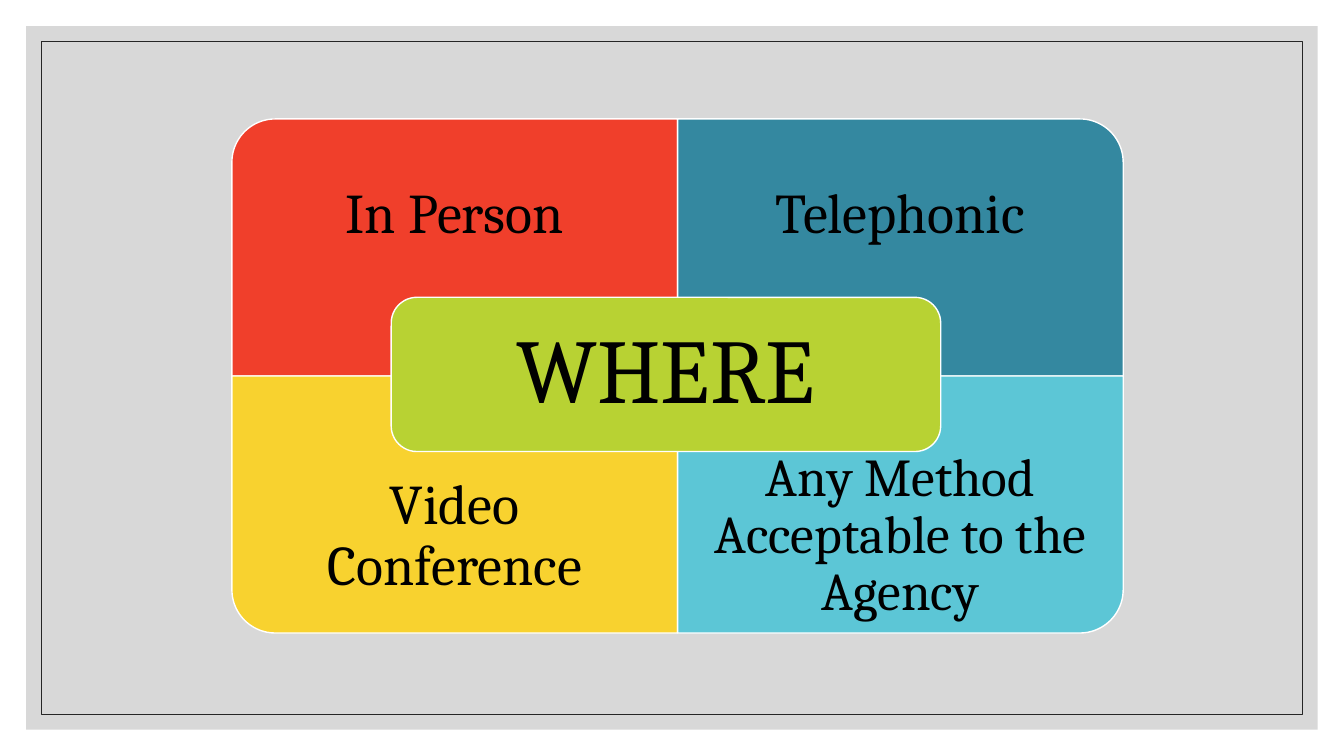
import math

from lxml import etree
from pptx import Presentation
from pptx import util as u
from pptx.dml.color import RGBColor
from pptx.enum import shapes, text
from pptx.oxml import ns

BLACK = RGBColor(0x00, 0x00, 0x00)
WHITE = RGBColor(0xFF, 0xFF, 0xFF)
PANEL_GRAY = RGBColor(0xBF, 0xBF, 0xBF)
FRAME_GRAY = RGBColor(0x26, 0x26, 0x26)
RED = RGBColor(0xF0, 0x3F, 0x2B)
TEAL = RGBColor(0x34, 0x88, 0xA0)
YELLOW = RGBColor(0xF8, 0xD2, 0x2F)
AQUA = RGBColor(0x5C, 0xC6, 0xD6)
LIME = RGBColor(0xB8, 0xD2, 0x33)

# Content: wording, fill, text size, side inset, inset towards the hub,
# direction from the matrix centre (x, y)
QUADRANTS = [
    ("In Person", RED, 40, 0.31, 0.95, -1, -1),
    ("Telephonic", TEAL, 40, 0.31, 0.95, 1, -1),
    ("Video Conference", YELLOW, 40, 0.31, 0.95, -1, 1),
    ("Any Method Acceptable to the Agency", AQUA, 38, 0.3, 0.93, 1, 1),
]
HUB = ("WHERE", LIME, 65)

# Geometry in inches
SLIDE_W, SLIDE_H = 13.33, 7.5
PANEL_MARGIN, FRAME_MARGIN = 0.26, 0.41
CENTER_X, CENTER_Y = 6.72, 3.73
QUAD_W, QUAD_H, RADIUS = 4.42, 2.55, 0.43
HUB_BOX = (3.88, 2.95, 5.45, 1.53)
HUB_INSET = 0.28
ARC_STEPS = 24


def paint(shape, fill, line, width):
    shape.shadow.inherit = False
    if fill is None:
        shape.fill.background()
    else:
        shape.fill.solid()
        shape.fill.fore_color.rgb = fill
    if line is None:
        shape.line.fill.background()
    else:
        shape.line.color.rgb = line
        shape.line.width = u.Pt(width)


def write(shape, wording, size, left, top, right, bottom):
    frame = shape.text_frame
    layout = {
        "word_wrap": True,
        "vertical_anchor": text.MSO_ANCHOR.MIDDLE,
        "margin_left": u.Inches(left),
        "margin_top": u.Inches(top),
        "margin_right": u.Inches(right),
        "margin_bottom": u.Inches(bottom),
    }
    for name, value in layout.items():
        setattr(frame, name, value)
    paragraph = frame.paragraphs[0]
    paragraph.alignment = text.PP_ALIGN.CENTER
    paragraph.line_spacing = 0.9
    run = paragraph.add_run()
    run.text = wording
    for name, value in {"name": "Cambria", "size": u.Pt(size)}.items():
        setattr(run.font, name, value)
    run.font.color.rgb = BLACK


def add_bordered_area(slide, margin, fill, line):
    area = slide.shapes.add_shape(
        shapes.MSO_SHAPE.RECTANGLE, u.Inches(margin), u.Inches(margin),
        u.Inches(SLIDE_W - 2 * margin), u.Inches(SLIDE_H - 2 * margin))
    paint(area, fill, line, 0.5)
    return area


def add_quadrant(slide, wording, fill, size, side, inner, dx, dy):
    # Outline runs from the centre, around the rounded outer corner
    offsets = [(0, 0), (QUAD_W, 0)]
    for step in range(ARC_STEPS + 1):
        angle = math.pi / 2 * step / ARC_STEPS
        offsets.append((QUAD_W - RADIUS + RADIUS * math.cos(angle),
                        QUAD_H - RADIUS + RADIUS * math.sin(angle)))
    offsets.append((0, QUAD_H))
    points = [(u.Inches(CENTER_X + dx * x), u.Inches(CENTER_Y + dy * y))
              for x, y in offsets]
    outline = slide.shapes.build_freeform(*points[0])
    outline.add_line_segments(points[1:], close=True)
    quadrant = outline.convert_to_shape()
    paint(quadrant, fill, WHITE, 1)
    top, bottom = (side, inner) if dy < 0 else (inner, side)
    write(quadrant, wording, size, side, top, side, bottom)


def main():
    deck = Presentation()
    deck.slide_width, deck.slide_height = u.Inches(SLIDE_W), u.Inches(SLIDE_H)
    slide = deck.slides.add_slide(deck.slide_layouts[6])

    # Translucent panel and thin frame
    panel = add_bordered_area(slide, PANEL_MARGIN, PANEL_GRAY, None)
    color = panel.fill._xPr.find(".//" + ns.qn("a:srgbClr"))
    etree.SubElement(color, ns.qn("a:alpha"), val="60000")
    add_bordered_area(slide, FRAME_MARGIN, None, FRAME_GRAY)

    # Matrix quadrants
    for quadrant in QUADRANTS:
        add_quadrant(slide, *quadrant)

    # Central hub
    wording, fill, size = HUB
    hub = slide.shapes.add_shape(shapes.MSO_SHAPE.ROUNDED_RECTANGLE,
                                 *map(u.Inches, HUB_BOX))
    paint(hub, fill, WHITE, 1)
    write(hub, wording, size, *[HUB_INSET] * 4)

    deck.save("out.pptx")


if __name__ == "__main__":
    main()
